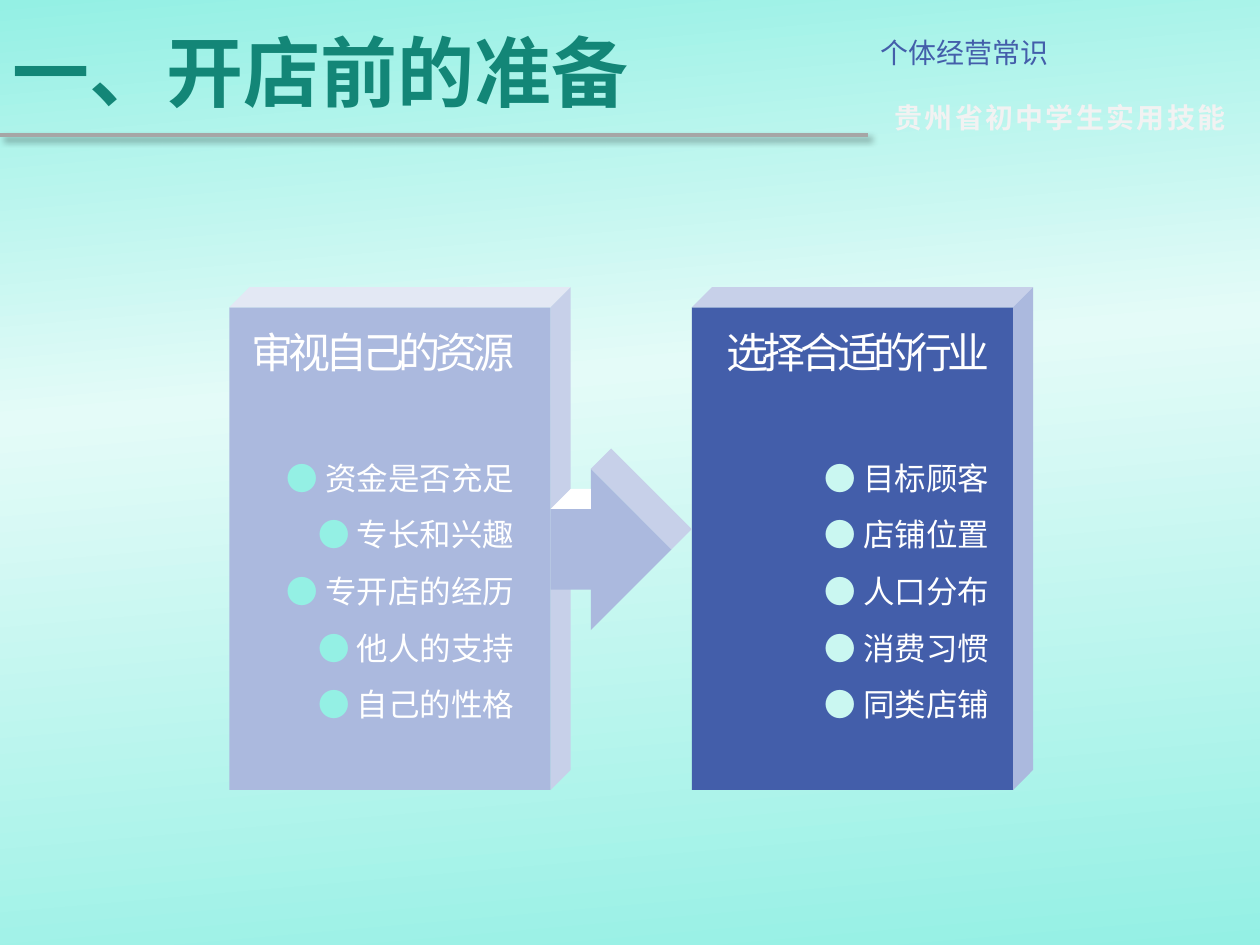
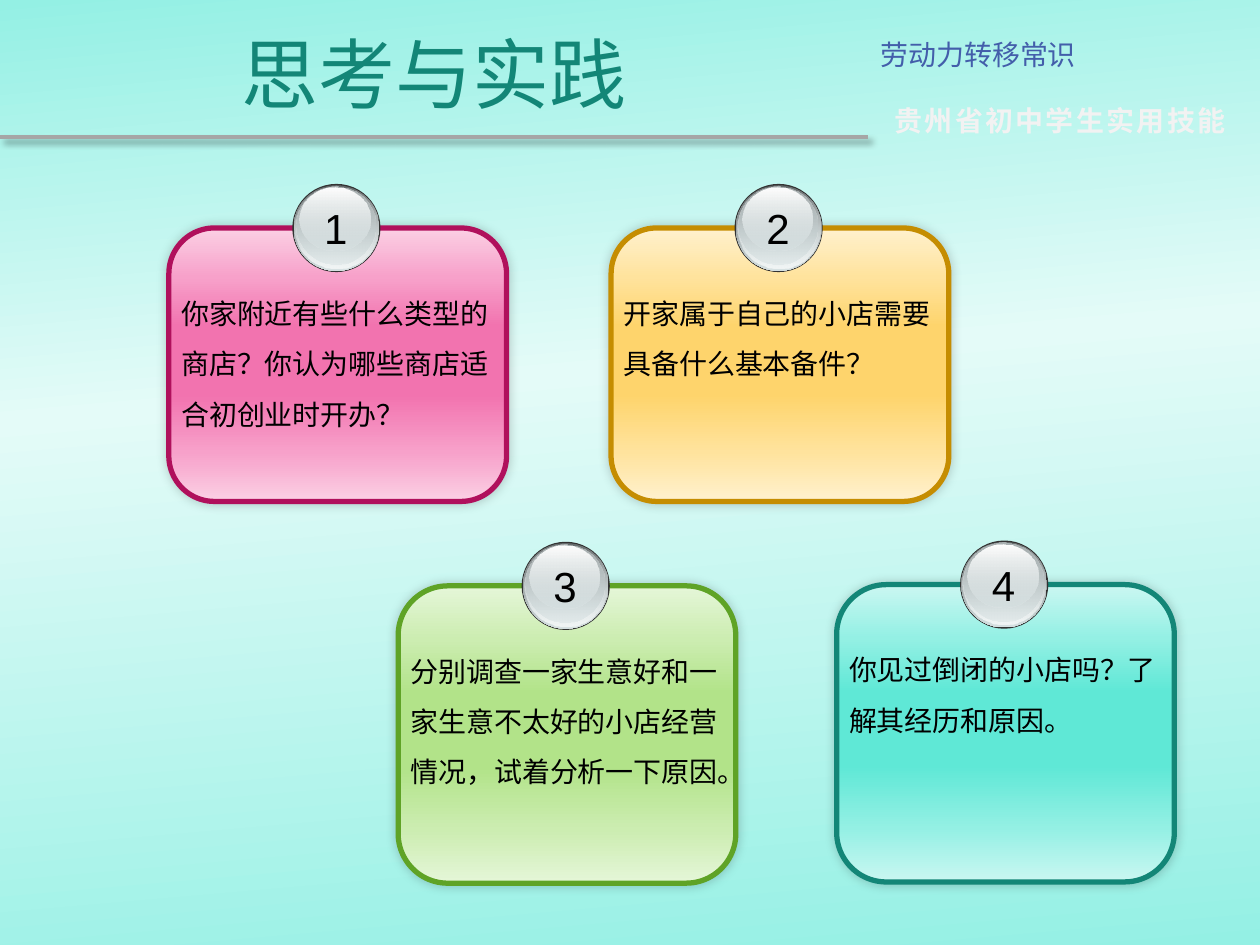
"""Build two slides on preparing to open a shop and on practice questions."""
from lxml import etree
from pptx import Presentation
from pptx.dml.color import RGBColor
from pptx.enum.shapes import MSO_CONNECTOR, MSO_SHAPE
from pptx.enum.text import MSO_ANCHOR, MSO_AUTO_SIZE, PP_ALIGN
from pptx.oxml import parse_xml
from pptx.oxml.ns import nsdecls, qn
from pptx.util import Inches, Pt

RECT, ROUND, OVAL = MSO_SHAPE.RECTANGLE, MSO_SHAPE.ROUNDED_RECTANGLE, MSO_SHAPE.OVAL
LEFT, MID, RIGHT, JUST = PP_ALIGN.LEFT, PP_ALIGN.CENTER, PP_ALIGN.RIGHT, PP_ALIGN.JUSTIFY
STRAIGHT = MSO_CONNECTOR.STRAIGHT
MIDDLE, FIXED = MSO_ANCHOR.MIDDLE, MSO_AUTO_SIZE.NONE
CJK = "Noto Sans CJK SC"
HUE = {
    "mint": "94F0E4", "pale": "E4FBF8", "foam": "CAF7F1", "teal": "138677",
    "blue": "435EAA", "lilac": "ABB9DE", "mist": "C7D0E9", "haze": "E3E8F4",
    "white": "FFFFFF", "snow": "F2F2F2", "black": "000000", "rule": "A6A6A6",
    "rim": "333333", "steel": "636869", "grey": "D6E1E2", "frost": "F1F5F5",
    "ash": "AAB2B3",
}
SHADE = (
    f"<a:effectLst {nsdecls('a')}>"
    '<a:outerShdw blurRad="{}" dist="{}" dir="{}" algn="ctr" rotWithShape="0">'
    '<a:srgbClr val="000000"><a:alpha val="{}"/></a:srgbClr>'
    "</a:outerShdw></a:effectLst>"
)


def paint(item, fill, stops, angle=90):
    if isinstance(stops, str):
        fill.solid()
        fill.fore_color.rgb = RGBColor.from_string(stops)
        return
    fill.gradient()
    fill.gradient_angle = 360 - angle
    ramp = item.element.find(".//" + qn("a:gsLst"))
    for old in list(ramp):
        ramp.remove(old)
    for place, hue, alpha in stops:
        stop = etree.SubElement(ramp, qn("a:gs"), pos=str(place * 1000))
        tone = etree.SubElement(stop, qn("a:srgbClr"), val=hue)
        if alpha < 100:
            etree.SubElement(tone, qn("a:alpha"), val=str(alpha * 1000))


def style(para, size, hue, align=LEFT, face=CJK, bold=False, gap=0):
    para.alignment = align
    font = para.font
    font.size, font.bold, font.name = Pt(size), bold, face
    font.color.rgb = RGBColor.from_string(hue)
    props = para._p.pPr.find(qn("a:defRPr"))
    etree.SubElement(props, qn("a:ea"), typeface=CJK)
    if gap:
        props.set("spc", str(int(gap * 100)))


deck = Presentation()
deck.slide_width, deck.slide_height = Inches(10), Inches(7.5)

heads = [
    ("一、开店前的准备", LEFT, True, "个体经营常识", 0),
    ("思考与实践", MID, False, "劳动力转移常识", 0.02),
]
for name, align, bold, topic, drop in heads:
    slide = deck.slides.add_slide(deck.slide_layouts[5])
    paint(slide, slide.background.fill,
          [(0, HUE["mint"], 100), (40, HUE["pale"], 100), (100, HUE["mint"], 100)], 85)
    title = slide.shapes.title
    title.left, title.top = Inches(0), Inches(0.05 + drop)
    title.width, title.height = Inches(6.89), Inches(1.02)
    frame = title.text_frame
    frame.text, frame.vertical_anchor, frame.auto_size = name, MIDDLE, FIXED
    style(frame.paragraphs[0], 44, HUE["teal"], align, bold=bold)

    rule = slide.shapes.add_connector(
        STRAIGHT, Inches(0), Inches(1.07 + drop), Inches(6.89), Inches(1.07 + drop))
    rule.line.color.rgb = RGBColor.from_string(HUE["rule"])
    rule.line.width = Pt(2.25)
    rule.element.spPr.append(parse_xml(SHADE.format(Pt(4), Pt(3), 45 * 60000, 40000)))

    tags = [
        (topic, 6.89, 0.23, 3.11, HUE["blue"], JUST, False, 0),
        ("贵州省初中学生实用技能", 7, 0.75, 2.95, HUE["snow"], LEFT, True, 1.4),
    ]
    for words, left, top, width, hue, side, heavy, gap in tags:
        box = slide.shapes.add_textbox(
            Inches(left), Inches(top + drop), Inches(width), Inches(0.37))
        box.text_frame.word_wrap = True
        box.text_frame.text = words
        style(box.text_frame.paragraphs[0], 16, hue, side, bold=heavy, gap=gap)

first, second = deck.slides

wide, high, deep = 2.55, 3.83, 0.16
top, base = 2.44, 2.44 + high
faces = []
for left, front, lid, side in [
    (5.49, "blue", "mist", "lilac"),
    (1.82, "lilac", "haze", "mist"),
]:
    right = left + wide
    block = first.shapes.add_shape(
        RECT, Inches(left), Inches(top), Inches(wide), Inches(high))
    paint(block, block.fill, HUE[front])
    block.line.fill.background()
    block.shadow.inherit = False
    faces += [
        (lid, [(left, top), (left + deep, top - deep),
               (right + deep, top - deep), (right, top)]),
        (side, [(right + deep, top - deep), (right + deep, base - deep),
                (right, base), (right, top)]),
    ]
faces += [
    ("lilac", [(4.37, 4.68), (4.69, 4.68), (4.69, 5), (5.33, 4.36),
               (4.69, 3.72), (4.69, 4.04), (4.37, 4.04)]),
    ("mist", [(4.69, 3.72), (4.85, 3.56), (5.49, 4.2), (5.33, 4.36)]),
    ("white", [(4.69, 3.88), (4.53, 3.88), (4.37, 4.04), (4.69, 4.04)]),
]
for hue, points in faces:
    spots = [(Inches(x), Inches(y)) for x, y in points]
    pen = first.shapes.build_freeform(*spots[0])
    pen.add_line_segments(spots[1:], close=True)
    face = pen.convert_to_shape()
    paint(face, face.fill, HUE[hue])
    face.line.fill.background()
    face.shadow.inherit = False

lists = [
    (1.82, 3.59, "mint", "审视自己的资源",
     ["资金是否充足", "专长和兴趣", "专开店的经历", "他人的支持", "自己的性格"]),
    (5.59, 3.28, "foam", "选择合适的行业",
     ["目标顾客", "店铺位置", "人口分布", "消费习惯", "同类店铺"]),
]
for left, tall, dot, head, items in lists:
    box = first.shapes.add_textbox(Inches(left), Inches(2.54), Inches(2.36), Inches(tall))
    frame = box.text_frame
    frame.word_wrap = True
    frame.text = head
    style(frame.paragraphs[0], 24, HUE["white"], RIGHT, gap=-3)
    for row, words in enumerate(items):
        para = frame.add_paragraph()
        para.line_spacing = 1.5
        if row == 0:
            para.space_before = Pt(36)
        style(para, 18, HUE["white"], RIGHT)
        mark = para.add_run()
        mark.text = "● "
        mark.font.name = "Calibri"
        mark.font.color.rgb = RGBColor.from_string(HUE[dot])
        para.add_run().text = words

discs = [
    (0.98, -0.35, 0.7, 0.7, HUE["rim"]),
    (0.99, -0.34, 0.68, 0.68, [(0, HUE["steel"], 100), (100, HUE["grey"], 100)]),
    (1, -0.34, 0.66, 0.66, [(0, HUE["grey"], 0), (100, HUE["frost"], 100)]),
    (1.01, -0.33, 0.63, 0.62, [(0, HUE["ash"], 100), (100, HUE["grey"], 48)]),
    (1.04, -0.32, 0.56, 0.5, [(0, HUE["white"], 100), (100, HUE["grey"], 38)]),
]
cards = [
    (1.34, 1.81, 2.17, "B0105C", ["FBD0E4", "F7A1CA", "F273AF"],
     "你家附近有些什么类型的商店？你认为哪些商店适合初创业时开办？"),
    (4.85, 1.81, 2.17, "C58D01", ["FFF1CE", "FFE39D", "FED46C"],
     "开家属于自己的小店需要具备什么基本备件？"),
    (3.16, 4.65, 2.36, "5FA326", ["E5F6D8", "CCEDB1", "B2E389"],
     "分别调查一家生意好和一家生意不太好的小店经营情况，试着分析一下原因。"),
    (6.64, 4.64, 2.36, HUE["teal"], [HUE["foam"], HUE["mint"], "5FE8D6"],
     "你见过倒闭的小店吗？了解其经历和原因。"),
]
for count, (left, top, tall, edge, tones, words) in enumerate(cards, 1):
    card = second.shapes.add_shape(
        ROUND, Inches(left), Inches(top), Inches(2.68), Inches(tall))
    ramp = zip([0, 18, 36, 61, 82, 100], tones + tones[::-1])
    paint(card, card.fill, [(place, tone, 100) for place, tone in ramp])
    card.line.color.rgb = RGBColor.from_string(edge)
    card.line.width = Pt(3)
    card.element.spPr.append(parse_xml(SHADE.format(Pt(6), 0, 315 * 60000, 20000)))

    for across, down, width, height, stops in discs:
        disc = second.shapes.add_shape(
            OVAL, Inches(left + across), Inches(top + down), Inches(width), Inches(height))
        paint(disc, disc.fill, stops)
        disc.line.fill.background()
        disc.shadow.inherit = False

    texts = [
        (str(count), 1.13, -0.25, 0.39, 0.5, 24, MID, "Arial", 1, False),
        (words, 0, 0.36, 2.68, 1.31, 16, LEFT, CJK, 1.5, True),
    ]
    for text, across, down, width, height, size, align, face, space, wrap in texts:
        box = second.shapes.add_textbox(
            Inches(left + across), Inches(top + down), Inches(width), Inches(height))
        box.text_frame.word_wrap = wrap
        box.text_frame.text = text
        para = box.text_frame.paragraphs[0]
        para.line_spacing = space
        style(para, size, HUE["black"], align, face)

deck.save("out.pptx")
